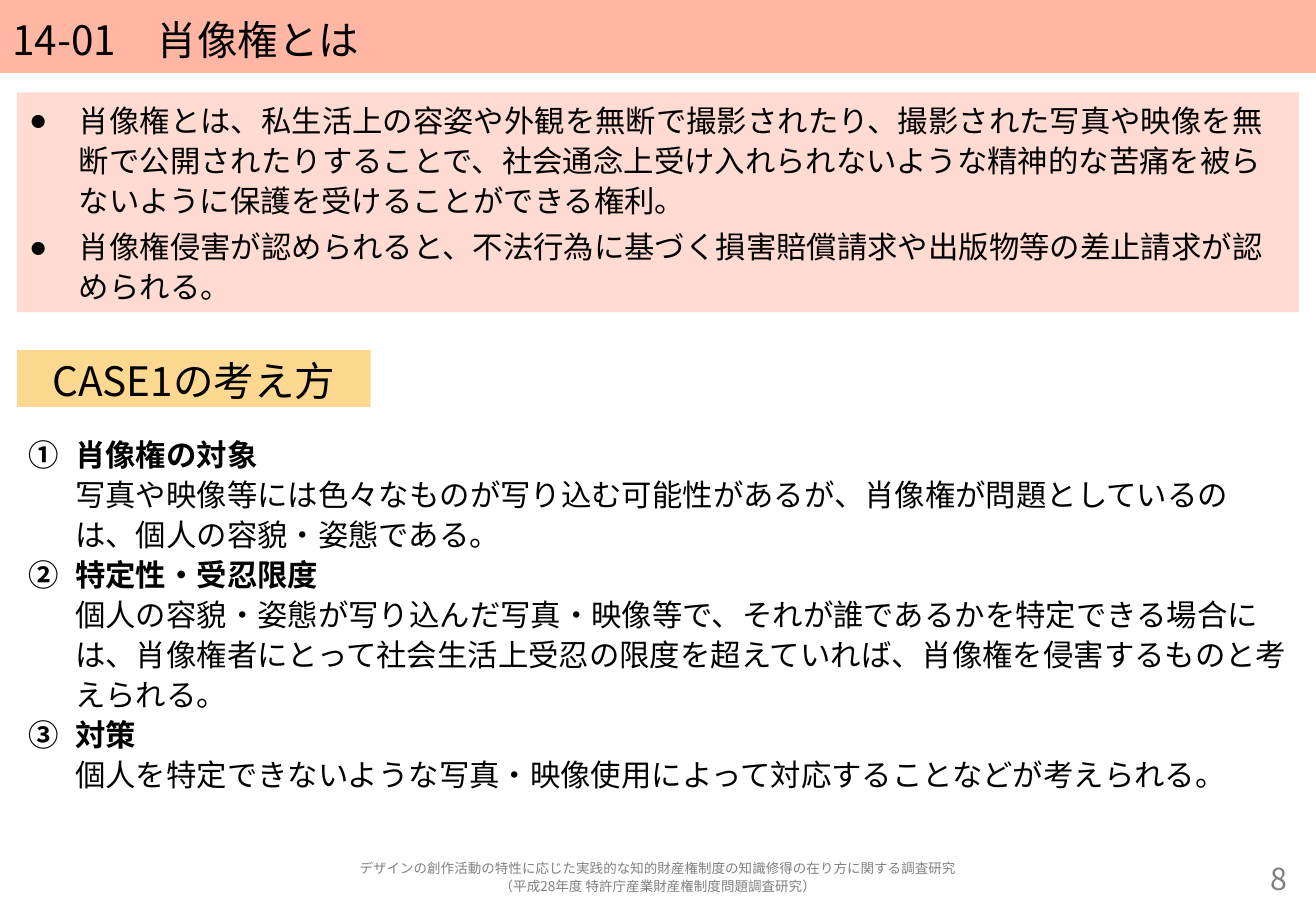
from lxml import etree
from pptx import Presentation
from pptx import util as u
from pptx.dml.color import RGBColor
from pptx.enum import shapes, text
from pptx.oxml.ns import qn

PX = 9144
FONT = "Noto Sans CJK JP"
A = text.PP_ALIGN
V = text.MSO_ANCHOR


def rgb(value):
    return RGBColor.from_string(value)


def write(sp, box, paragraphs, size, color="000000", align=A.LEFT, anchor=V.MIDDLE,
          fill=None, indent=0, bullet=None, before=0):
    sp.left, sp.top, sp.width, sp.height = [n * PX for n in box]
    if fill:
        sp.fill.solid()
        sp.fill.fore_color.rgb = rgb(fill)
    tf = sp.text_frame
    tf.word_wrap = True
    tf.auto_size = text.MSO_AUTO_SIZE.NONE
    tf.vertical_anchor = anchor
    for i, line in enumerate(paragraphs):
        p = tf.add_paragraph() if i else tf.paragraphs[0]
        p.text = line
        p.alignment = align
        p.line_spacing = 1.1
        p.space_before = u.Pt(before)
        if bullet:
            pPr = p._p.get_or_add_pPr()
            pPr.set("marL", str(indent * PX))
            pPr.set("indent", str(-indent * PX))
            tag, key, value = bullet
            etree.SubElement(pPr, qn(tag)).set(key, value)
        for r in p.runs:
            r.font.size = u.Pt(size)
            r.font.name = FONT
            r.font.bold = False
            r.font.color.rgb = rgb(color)
            etree.SubElement(r._r.get_or_add_rPr(), qn("a:ea")).set("typeface", FONT)
    return tf


prs = Presentation()
prs.slide_width, prs.slide_height = 1083 * PX, 750 * PX
s = prs.slides.add_slide(prs.slide_layouts[1])

write(s.shapes.title, (0, 0, 1083, 60), ["14-01　肖像権とは"], 24, fill="FFB7A3")

definition = [
    "肖像権とは、私生活上の容姿や外観を無断で撮影されたり、撮影された写真や映像を無断で公開されたりすることで、社会通念上受け入れられないような精神的な苦痛を被らないように保護を受けることができる権利。",
    "肖像権侵害が認められると、不法行為に基づく損害賠償請求や出版物等の差止請求が認められる。",
]
write(s.placeholders[1], (14, 76, 1055, 181), definition, 18, anchor=V.TOP, fill="FFDBD1",
      indent=41, bullet=("a:buChar", "char", "●"), before=3.6)

case = s.shapes.add_shape(shapes.MSO_SHAPE.RECTANGLE, 0, 0, PX, PX)
case.shadow.inherit = False
case.line.fill.background()
write(case, (14, 288, 291, 47), ["CASE1の考え方"], 24, align=A.CENTER, fill="FCD890")

points = [
    ("肖像権の対象", "写真や映像等には色々なものが写り込む可能性があるが、肖像権が問題としているのは、個人の容貌・姿態である。"),
    ("特定性・受忍限度", "個人の容貌・姿態が写り込んだ写真・映像等で、それが誰であるかを特定できる場合には、肖像権者にとって社会生活上受忍の限度を超えていれば、肖像権を侵害するものと考えられる。"),
    ("対策", "個人を特定できないような写真・映像使用によって対応することなどが考えられる。"),
]
tf = write(s.shapes.add_textbox(0, 0, PX, PX), (14, 351, 1055, 339),
           ["\v".join(point) for point in points], 18, anchor=V.TOP,
           indent=38, bullet=("a:buAutoNum", "type", "circleNumDbPlain"))
for p in tf.paragraphs:
    p._p.get_or_add_pPr().set("hangingPunct", "0")
    p.runs[0].font.bold = True

footer = [
    "デザインの創作活動の特性に応じた実践的な知的財産権制度の知識修得の在り方に関する調査研究",
    "（平成28年度 特許庁産業財産権制度問題調査研究）",
]
write(s.shapes.add_textbox(0, 0, PX, PX), (14, 706, 1055, 31), footer, 8, "808080", A.CENTER)
write(s.shapes.add_textbox(0, 0, PX, PX), (935, 706, 134, 31), ["8"], 18, "808080", A.RIGHT)

prs.save("out.pptx")
